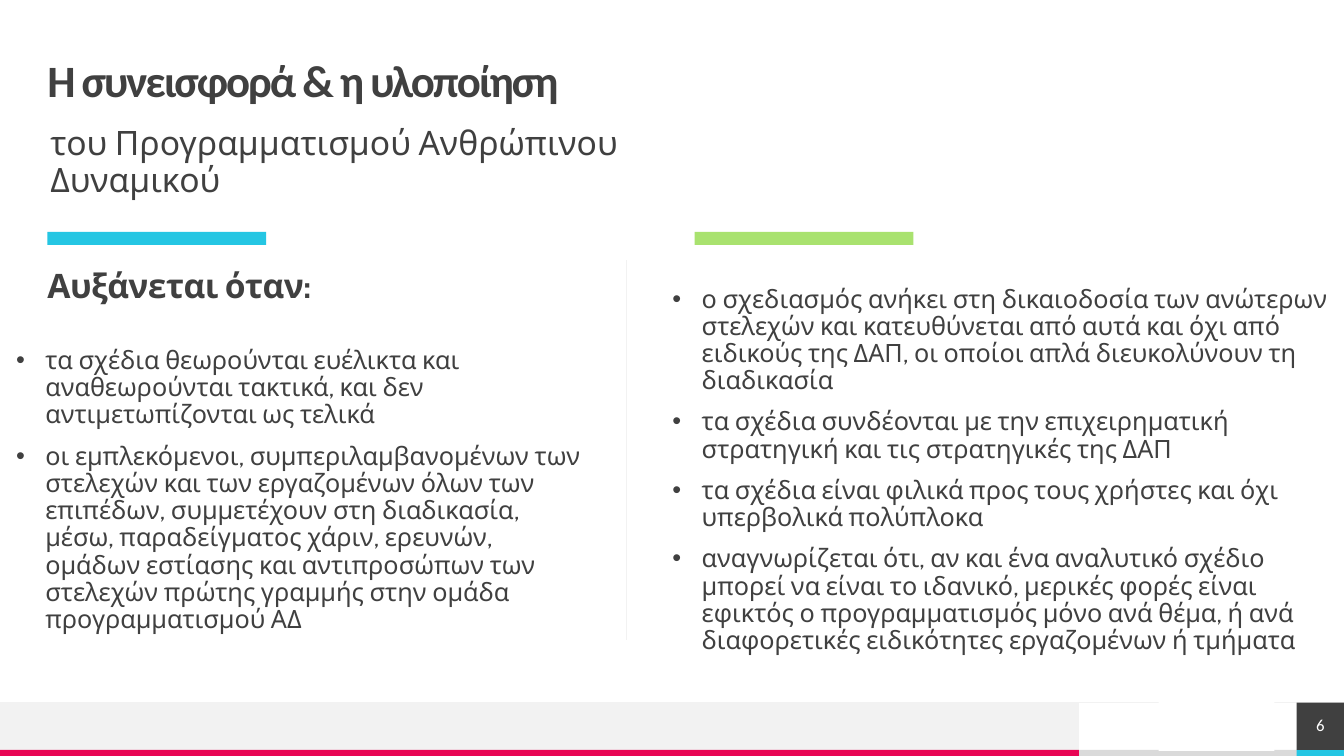
from dataclasses import dataclass

from lxml.etree import SubElement
from pptx import Presentation
from pptx.dml.color import RGBColor as RGB
from pptx.enum.shapes import MSO_CONNECTOR, MSO_SHAPE
from pptx.enum.text import MSO_ANCHOR, PP_ALIGN
from pptx.oxml.ns import qn
from pptx.util import Inches, Pt


@dataclass(frozen=True)
class Theme:
    dark: RGB = RGB.from_string("404040")
    white: RGB = RGB.from_string("FFFFFF")
    pale: RGB = RGB.from_string("F2F2F2")
    grey: RGB = RGB.from_string("DADADA")
    pink: RGB = RGB.from_string("E80554")
    cyan: RGB = RGB.from_string("25C6E3")
    green: RGB = RGB.from_string("A9E26F")
    heading_font: str = "Calibri"
    body_font: str = "Cabin"
    title_size: int = 32
    subtitle_size: int = 24
    body_size: int = 18
    number_size: int = 12


theme = Theme()

prs = Presentation()
prs.slide_width, prs.slide_height = Inches(13.33), Inches(7.5)
slide = prs.slides.add_slide(prs.slide_layouts[6])
shapes = slide.shapes


def add_block(left, top, width, height, color):
    block = shapes.add_shape(MSO_SHAPE.RECTANGLE, Inches(left), Inches(top),
                             Inches(width), Inches(height))
    block.shadow.inherit = False
    block.fill.solid()
    block.fill.fore_color.rgb = color
    block.line.fill.background()
    return block


def write(frame, texts, font, size, color=theme.dark, bold=False,
          spacing=0, before=10, bullets=False, margins=(0, 0)):
    """Fill a frame with paragraphs; spacing is between letters, in points."""
    frame.word_wrap = True
    frame.margin_left = frame.margin_right = Inches(margins[0])
    frame.margin_top = frame.margin_bottom = Inches(margins[1])
    for index, text in enumerate(texts):
        paragraph = frame.paragraphs[0] if index == 0 else frame.add_paragraph()
        run = paragraph.add_run()
        run.text = text
        paragraph.line_spacing = 0.9
        paragraph.space_before = Pt(before)
        if bullets:
            props = paragraph._p.get_or_add_pPr()
            props.set("marL", str(Inches(0.29)))
            props.set("indent", str(-Inches(0.29)))
            SubElement(props, qn("a:buFont")).set("typeface", "Arial")
            SubElement(props, qn("a:buChar")).set("char", "•")
        paragraph.font.name = font
        paragraph.font.size = Pt(size)
        paragraph.font.bold = bold
        paragraph.font.color.rgb = color
        if spacing:
            run._r.get_or_add_rPr().set("spc", str(round(spacing * 100)))


# Footer bands, column accents and page number
for band in [
    (10.7, 7.44, 2.17, 0.06, theme.grey),
    (0, 6.97, 10.7, 0.47, theme.pale),
    (0, 7.44, 10.7, 0.06, theme.pink),
    (12.86, 7.44, 0.47, 0.06, theme.cyan),
    (0.47, 2.3, 2.17, 0.13, theme.cyan),
    (6.89, 2.3, 2.17, 0.13, theme.green),
]:
    add_block(*band)

# Footer rule and column divider
for x1, y1, x2, y2 in [(13.33, 6.97, 0, 6.97), (6.21, 2.58, 6.21, 6.35)]:
    rule = shapes.add_connector(MSO_CONNECTOR.STRAIGHT, Inches(x1), Inches(y1),
                                Inches(x2), Inches(y2))
    rule.line.color.rgb = theme.pale
    rule.line.width = Pt(0.5)
    SubElement(rule._element.spPr, qn("a:effectLst"))

page_number = add_block(12.86, 6.97, 0.47, 0.47, theme.dark)
write(page_number.text_frame, ["6"], theme.heading_font, theme.number_size,
      theme.white, before=0)
page_number.text_frame.vertical_anchor = MSO_ANCHOR.MIDDLE
page_number.text_frame.paragraphs[0].alignment = PP_ALIGN.CENTER
add_block(11.49, 6.8, 1.15, 0.65, theme.white)

# Headings
title = shapes.add_textbox(Inches(0.47), Inches(0.59), Inches(12.4), Inches(0.47))
write(title.text_frame, ["Η συνεισφορά & η υλοποίηση"], theme.heading_font,
      theme.title_size, bold=True, spacing=-1.5, before=0)
title.text_frame.vertical_anchor = MSO_ANCHOR.MIDDLE

subtitle = shapes.add_textbox(Inches(0.4), Inches(1.21), Inches(7.08), Inches(0.46))
write(subtitle.text_frame, ["του Προγραμματισμού Ανθρώπινου Δυναμικού"],
      theme.body_font, theme.subtitle_size, margins=(0.1, 0.05))

condition = shapes.add_textbox(Inches(0.47), Inches(2.67), Inches(5.98), Inches(0.39))
write(condition.text_frame, ["Αυξάνεται όταν:"], theme.body_font,
      theme.subtitle_size, bold=True, spacing=-0.4)

# Bulleted columns
columns = [
    ((0.16, 3.45, 5.68, 2.9), [
        "τα σχέδια θεωρούνται ευέλικτα και αναθεωρούνται τακτικά, και δεν "
        "αντιμετωπίζονται ως τελικά",
        "οι εμπλεκόμενοι, συμπεριλαμβανομένων των στελεχών και των εργαζομένων "
        "όλων των επιπέδων, συμμετέχουν στη διαδικασία, μέσω, παραδείγματος "
        "χάριν, ερευνών, ομάδων εστίασης και αντιπροσώπων των στελεχών πρώτης "
        "γραμμής στην ομάδα προγραμματισμού ΑΔ",
    ]),
    ((6.67, 2.84, 6.5, 4.06), [
        "ο σχεδιασμός ανήκει στη δικαιοδοσία των ανώτερων στελεχών και "
        "κατευθύνεται από αυτά και όχι από ειδικούς της ΔΑΠ, οι οποίοι απλά "
        "διευκολύνουν τη διαδικασία",
        "τα σχέδια συνδέονται με την επιχειρηματική στρατηγική και τις "
        "στρατηγικές της ΔΑΠ",
        "τα σχέδια είναι φιλικά προς τους χρήστες και όχι υπερβολικά πολύπλοκα",
        "αναγνωρίζεται ότι, αν και ένα αναλυτικό σχέδιο μπορεί να είναι το "
        "ιδανικό, μερικές φορές είναι εφικτός ο προγραμματισμός μόνο ανά θέμα, "
        "ή ανά διαφορετικές ειδικότητες εργαζομένων ή τμήματα",
    ]),
]
for bounds, points in columns:
    column = shapes.add_textbox(*map(Inches, bounds))
    write(column.text_frame, points, theme.body_font, theme.body_size, bullets=True)

prs.save("out.pptx")
